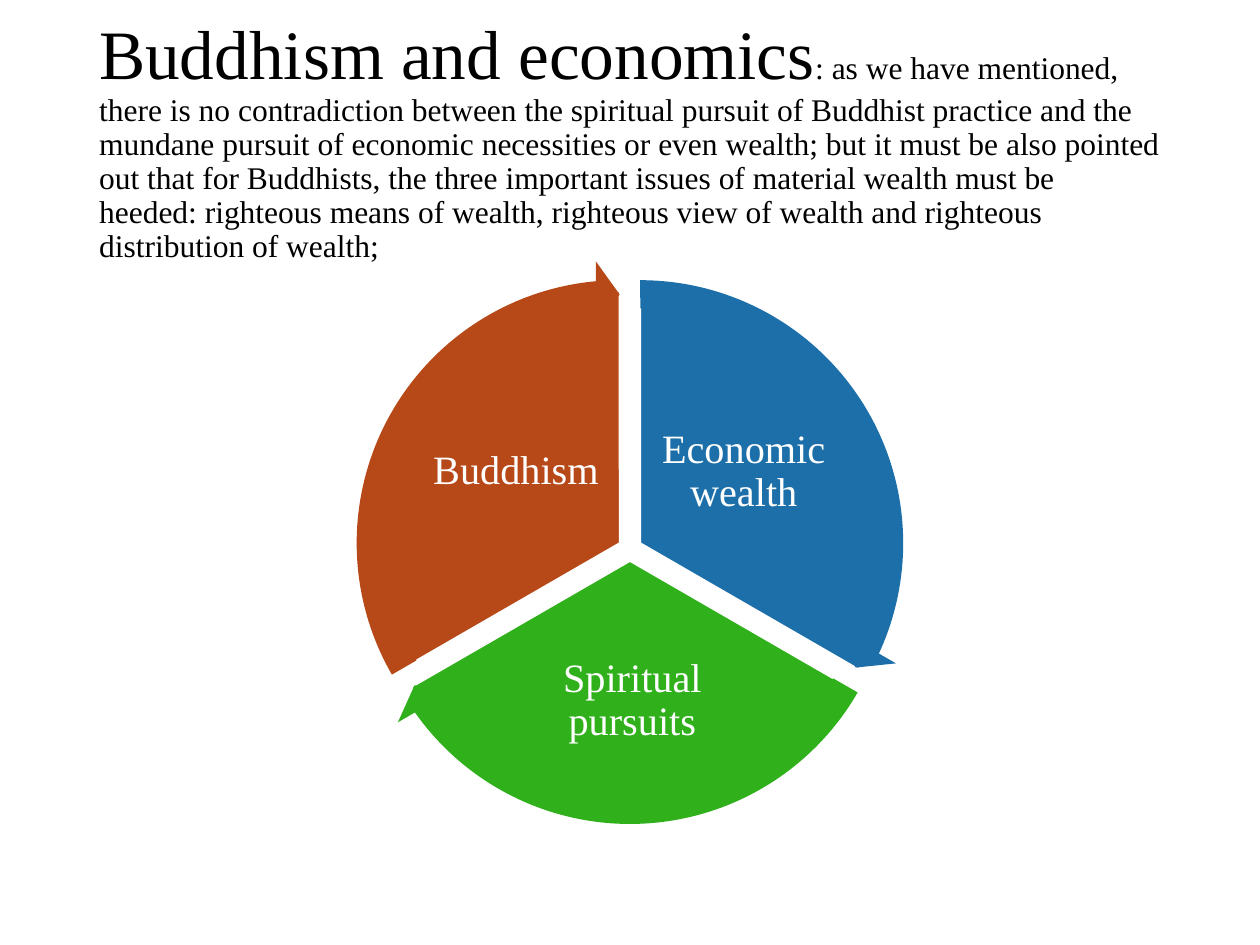
import math

import pptx
import pptx.dml.color
import pptx.enum.shapes
import pptx.enum.text
import pptx.util

Cm = pptx.util.Cm
Pt = pptx.util.Pt
RGBColor = pptx.dml.color.RGBColor
ShapeType = pptx.enum.shapes.MSO_SHAPE
Align = pptx.enum.text.PP_ALIGN

TITLE = [
    ("Buddhism and economics", "heading"),
    (
        ": as we have mentioned, there is no contradiction between the spiritual "
        "pursuit of Buddhist practice and the mundane pursuit of economic "
        "necessities or even wealth; but it must be also pointed out that for "
        "Buddhists, the three important issues of material wealth must be heeded: "
        "righteous means of wealth, righteous view of wealth and righteous "
        "distribution of wealth;",
        "body",
    ),
]
TITLE_BOX = (1.75, 1.02, 21.89, 3.68)

SECTORS = [
    {"label": "Economic wealth", "color": "blue", "box": (13.18, 8, 3.63, 3.02)},
    {"label": "Spiritual pursuits", "color": "green", "box": (10.03, 12.8, 5.44, 2.67)},
    {"label": "Buddhism", "color": "orange", "box": (8.59, 8, 3.63, 3.02)},
]

THEME = {
    "font": "Times New Roman",
    "sizes": {"heading": 39.6, "body": 18, "label": 23},
    "colors": {
        "black": "000000",
        "white": "FFFFFF",
        "blue": "1D6FA9",
        "green": "30B01B",
        "orange": "B74919",
    },
}

HUB = (12.7, 11.07)
SECTOR_OFFSET = 0.24
PIE_DIAMETER = 10.16
ARROW_DIAMETER = 11.4
FIRST_ANGLE = 270
SWEEP = 360 / len(SECTORS)
ANGLE_UNIT = 0.6
ARROW_WIDTH = 0.05
HEAD_ANGLE = 3.28
HEAD_WIDTH = 0.06


def color(name):
    return RGBColor.from_string(THEME["colors"][name])


def set_format(target, values):
    for name, value in values.items():
        setattr(target, name, value)


def add_text(slide, box, runs, color_name, alignment, margins):
    frame = slide.shapes.add_textbox(*map(Cm, box)).text_frame
    set_format(frame, {
        "word_wrap": True,
        "auto_size": pptx.enum.text.MSO_AUTO_SIZE.NONE,
        "vertical_anchor": pptx.enum.text.MSO_ANCHOR.MIDDLE,
        **margins,
    })
    paragraph = frame.paragraphs[0]
    set_format(paragraph, {"alignment": alignment, "line_spacing": 0.9})
    for text, size in runs:
        run = paragraph.add_run()
        run.text = text
        set_format(run.font, {"name": THEME["font"], "size": Pt(THEME["sizes"][size])})
        run.font.color.rgb = color(color_name)


def add_round_shape(slide, kind, center, diameter, color_name, adjustments):
    corner = [Cm(position - diameter / 2) for position in center]
    shape = slide.shapes.add_shape(kind, *corner, Cm(diameter), Cm(diameter))
    shape.shadow.inherit = False
    shape.fill.solid()
    shape.fill.fore_color.rgb = color(color_name)
    for index, value in enumerate(adjustments):
        shape.adjustments[index] = value
    return shape


def sector_geometry(index):
    start = FIRST_ANGLE + index * SWEEP
    middle = math.radians(start + SWEEP / 2)
    center = (
        HUB[0] + SECTOR_OFFSET * math.cos(middle),
        HUB[1] + SECTOR_OFFSET * math.sin(middle),
    )
    return center, start % 360 * ANGLE_UNIT, (start + SWEEP) % 360 * ANGLE_UNIT


def main():
    presentation = pptx.Presentation()
    set_format(presentation, {"slide_width": Cm(25.4), "slide_height": Cm(19.05)})
    slide = presentation.slides.add_slide(presentation.slide_layouts[6])
    add_text(slide, TITLE_BOX, TITLE, "black", Align.LEFT, {})

    label_margins = {
        f"margin_{side}": Cm(0.08) for side in ("left", "top", "right", "bottom")
    }
    for index, sector in enumerate(SECTORS):
        center, start, end = sector_geometry(index)
        pie = add_round_shape(
            slide, ShapeType.PIE, center, PIE_DIAMETER, sector["color"], (start, end)
        )
        pie.line.color.rgb = color("white")
        pie.line.width = Pt(1)
        add_text(
            slide, sector["box"], [(sector["label"], "label")],
            "white", Align.CENTER, label_margins,
        )

    for index, sector in enumerate(SECTORS):
        center, start, end = sector_geometry(index)
        arrow = add_round_shape(
            slide, ShapeType.CIRCULAR_ARROW, center, ARROW_DIAMETER, sector["color"],
            (ARROW_WIDTH, HEAD_ANGLE, end - HEAD_ANGLE, start, HEAD_WIDTH),
        )
        arrow.line.fill.background()

    presentation.save("out.pptx")


if __name__ == "__main__":
    main()
